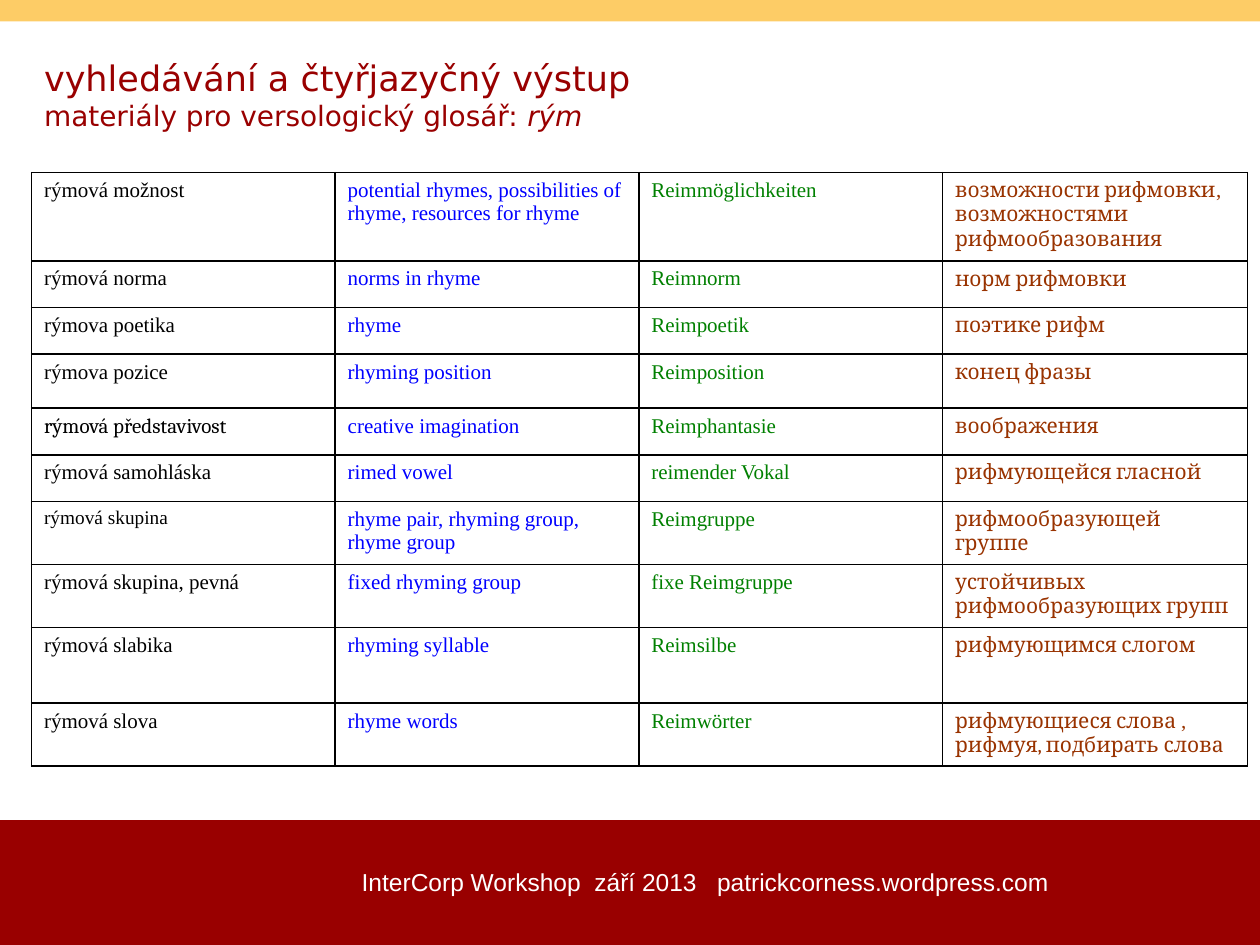
from copy import deepcopy

from lxml.etree import SubElement
from pptx import Presentation
from pptx.dml.color import RGBColor
from pptx.enum.shapes import MSO_SHAPE
from pptx.enum.text import MSO_ANCHOR, MSO_AUTO_SIZE, PP_ALIGN
from pptx.oxml.ns import qn
from pptx.util import Inches, Pt

RED = "990000"
COLUMN_COLORS = ["000000", "0000FF", "008000", "993300"]
COLUMN_WIDTHS = [2.41, 2.41, 2.41, 2.42]
ROW_HEIGHTS = [0.7, 0.37, 0.37, 0.43, 0.37, 0.37, 0.5, 0.5, 0.6, 0.5]
GLOSSARY = [
    ["rýmová možnost", "potential rhymes, possibilities of rhyme, resources for rhyme",
     "Reimmöglichkeiten", "возможности рифмовки, возможностями рифмообразования"],
    ["rýmová norma", "norms in rhyme", "Reimnorm", "норм рифмовки"],
    ["rýmova poetika", "rhyme", "Reimpoetik", "поэтике рифм"],
    ["rýmova pozice", "rhyming position", "Reimposition", "конец фразы"],
    ["rýmová představivost", "creative imagination", "Reimphantasie", "воображения"],
    ["rýmová samohláska", "rimed vowel", "reimender Vokal", "рифмующейся гласной"],
    ["rýmová skupina", "rhyme pair, rhyming group, rhyme group",
     "Reimgruppe", "рифмообразующей группе"],
    ["rýmová skupina, pevná", "fixed rhyming group",
     "fixe Reimgruppe", "устойчивых рифмообразующих групп"],
    ["rýmová slabika", "rhyming syllable", "Reimsilbe", "рифмующимся слогом"],
    ["rýmová slova", "rhyme words", "Reimwörter",
     "рифмующиеся слова , рифмуя, подбирать слова"],
]


def color(value):
    return RGBColor.from_string(value)


class GlossarySlide:
    """Holds the style and the current slide, and adds each kind of element."""

    title_font = "DejaVu Sans"
    footer_font = "Arial"
    table_font = "Times New Roman"
    russian_font = "Cambria"

    def __init__(self, presentation):
        self.slide = presentation.slides.add_slide(presentation.slide_layouts[5])

    def format_run(self, run, name, size, value, italic=None):
        run.font.name = name
        run.font.size = Pt(size)
        run.font.color.rgb = color(value)
        run.font.italic = italic

    def place(self, shape, left, top, width, height):
        shape.left, shape.top = Inches(left), Inches(top)
        shape.width, shape.height = Inches(width), Inches(height)

    def add_band(self, top, height, value):
        shape = self.slide.shapes.add_shape(
            MSO_SHAPE.RECTANGLE, 0, Inches(top), Inches(10), Inches(height))
        shape.shadow.inherit = False
        shape.fill.solid()
        shape.fill.fore_color.rgb = color(value)
        shape.line.fill.background()

    def add_title(self, heading, subtitle, term):
        title = self.slide.shapes.title
        self.place(title, 0.25, 0.39, 9.38, 0.71)
        frame = title.text_frame
        frame.text = f"{heading}\v{subtitle}"
        frame.vertical_anchor = MSO_ANCHOR.MIDDLE
        frame.auto_size = MSO_AUTO_SIZE.SHAPE_TO_FIT_TEXT
        paragraph = frame.paragraphs[0]
        paragraph.alignment = PP_ALIGN.LEFT
        paragraph.add_run().text = term
        for run, size, italic in zip(paragraph.runs, [20, 16, 16], [None, None, True]):
            self.format_run(run, self.title_font, size, RED, italic)
        line_break = paragraph._p.find(qn("a:br"))
        line_break.append(deepcopy(paragraph.runs[0]._r.find(qn("a:rPr"))))

    def add_footer(self, text):
        box = self.slide.shapes.add_textbox(0, 0, 0, 0)
        self.place(box, 2.57, 6.83, 6.06, 0.57)
        frame = box.text_frame
        frame.word_wrap = True
        frame.text = text
        paragraph = frame.paragraphs[0]
        paragraph.alignment = PP_ALIGN.CENTER
        self.format_run(paragraph.runs[0], self.footer_font, 14, "FFFFFF")

    def add_borders(self, cell):
        properties = cell._tc.get_or_add_tcPr()
        for side in ("lnL", "lnR", "lnT", "lnB"):
            line = SubElement(properties, qn(f"a:{side}"), w=str(Pt(1)))
            fill = SubElement(line, qn("a:solidFill"))
            SubElement(fill, qn("a:srgbClr"), val="000000")

    def fill_cell(self, cell, text, column):
        self.add_borders(cell)
        cell.fill.background()
        value = COLUMN_COLORS[column]
        size = 11 if text == "rýmová skupina" else 12
        if column < 3:
            cell.text_frame.text = text
            name = self.russian_font if text == "rýmová představivost" else self.table_font
            self.format_run(cell.text_frame.paragraphs[0].runs[0], name, size, value)
            return
        for piece in filter(None, text.partition(", ")):
            run = cell.text_frame.paragraphs[0].add_run()
            run.text = piece
            name = self.table_font if piece == ", " else self.russian_font
            self.format_run(run, name, size, value)

    def add_glossary(self, rows):
        frame = self.slide.shapes.add_table(
            len(rows), len(COLUMN_WIDTHS), Inches(0.25), Inches(1.37),
            Inches(sum(COLUMN_WIDTHS)), Inches(sum(ROW_HEIGHTS)))
        table = frame.table
        table.first_row = False
        table.horz_banding = False
        for column, width in zip(table.columns, COLUMN_WIDTHS):
            column.width = Inches(width)
        for row, height, texts in zip(table.rows, ROW_HEIGHTS, rows):
            row.height = Inches(height)
            for column, (cell, text) in enumerate(zip(row.cells, texts)):
                self.fill_cell(cell, text, column)


def main():
    presentation = Presentation()
    presentation.slide_width = Inches(10)
    presentation.slide_height = Inches(7.5)
    slide = GlossarySlide(presentation)
    slide.add_band(6.51, 0.99, RED)
    slide.add_band(0, 0.17, "FDCC66")
    slide.add_footer("InterCorp Workshop  září 2013   patrickcorness.wordpress.com")
    slide.add_title("vyhledávání a čtyřjazyčný výstup ",
                    "materiály pro versologický glosář: ", "rým")
    slide.add_glossary(GLOSSARY)
    presentation.save("out.pptx")


if __name__ == "__main__":
    main()
